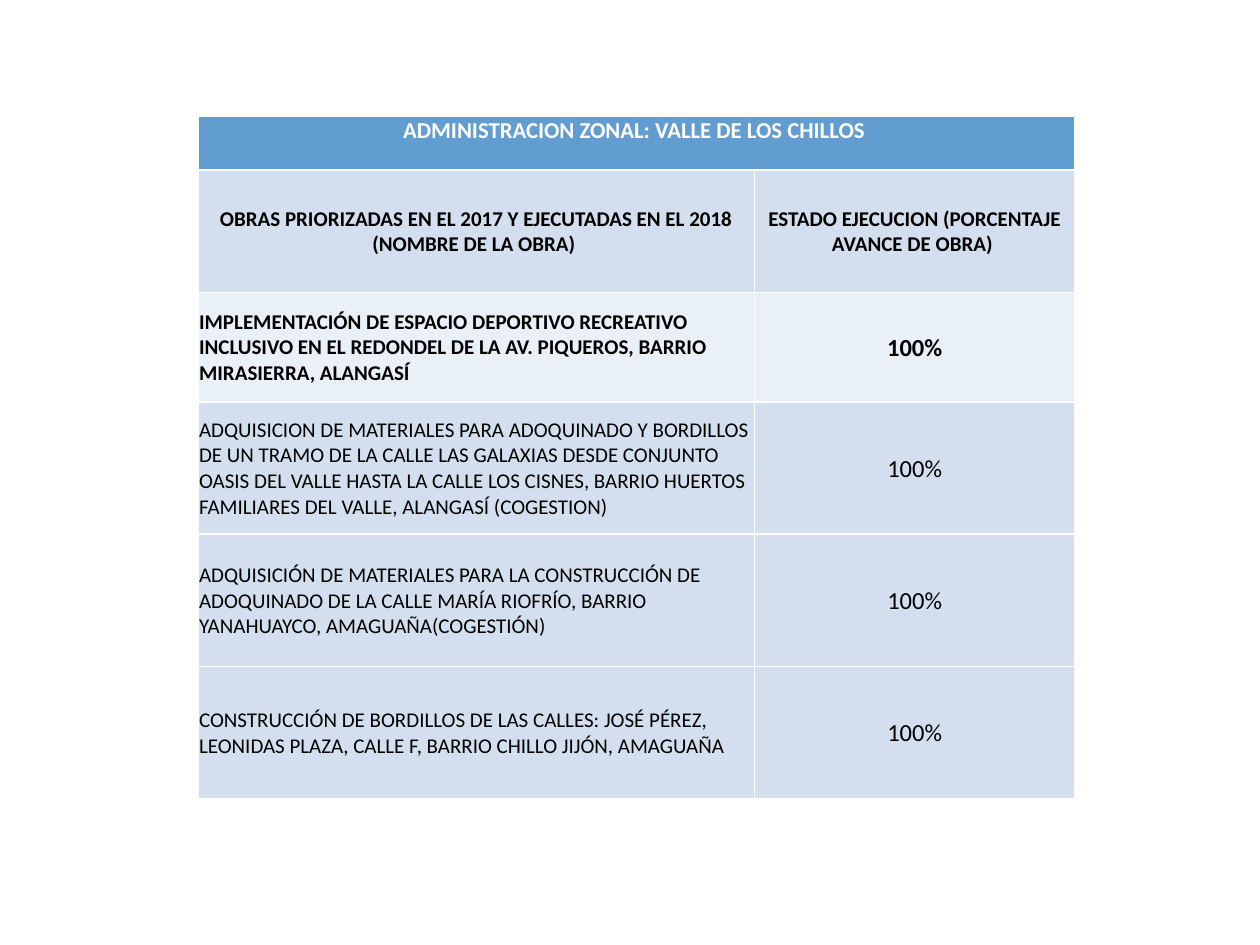
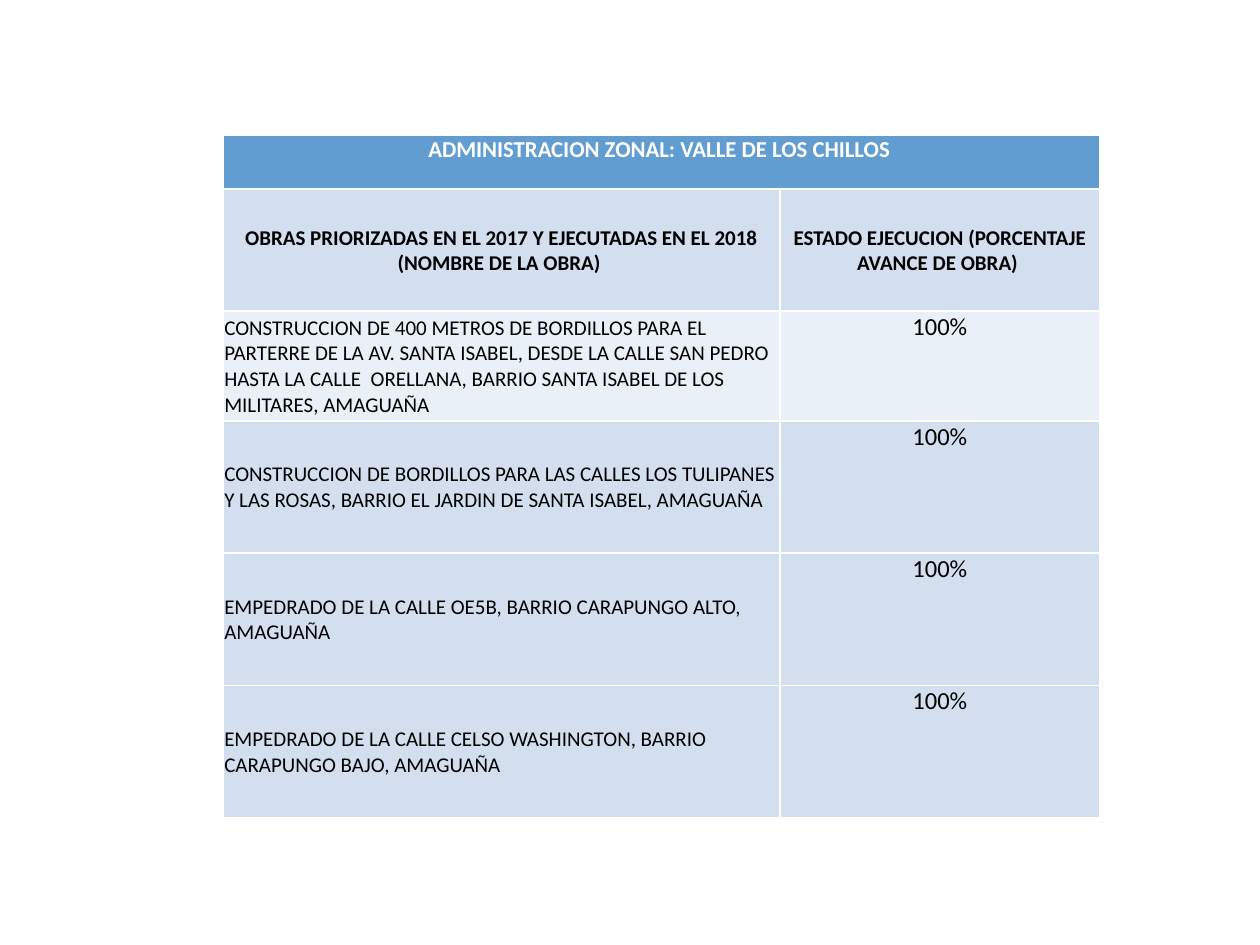
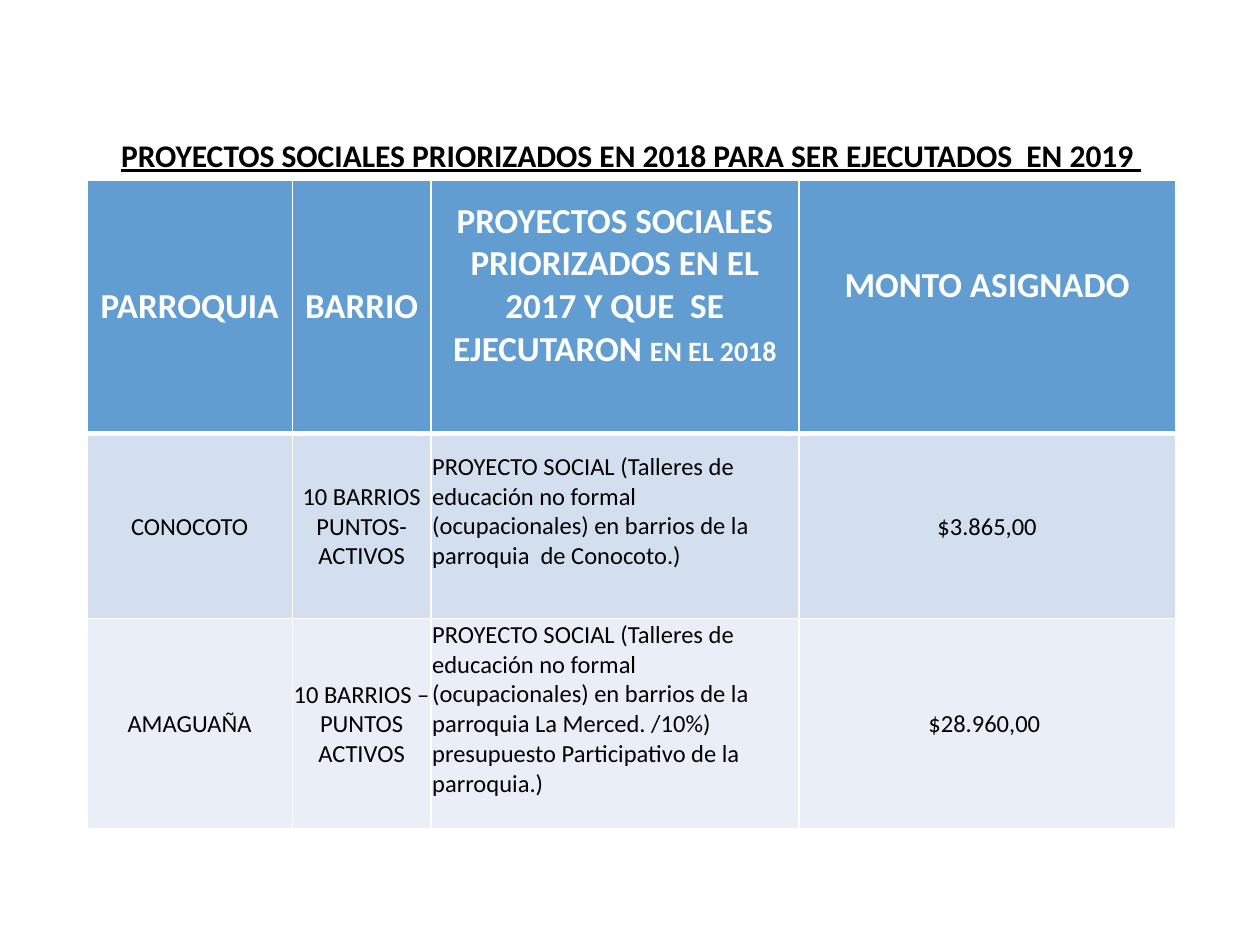
from lxml import etree
from pptx import Presentation
from pptx import util as u
from pptx.dml import color
from pptx.enum import text as t
from pptx.oxml import ns

W, H = 10, 7.5
FONT = "Calibri"
WHITE, BLACK = "FFFFFF", "000000"
BLUE, BAND, PALE, MIST = "629DD1", "D3DFEE", "EAF0F7", "EAEFF7"
TITLE, BLANK = 5, 6
LEFT, MID = t.PP_ALIGN.LEFT, t.PP_ALIGN.CENTER
TOP, CORE = t.MSO_ANCHOR.TOP, t.MSO_ANCHOR.MIDDLE
TIGHT = (0.01, 0.01, 0.01, 0)
HEAD = dict(color=WHITE, bold=True)


def rgb(code):
    return color.RGBColor.from_string(code)


def write(host, frame, words, size=12, color=BLACK, bold=False, line=False,
          align=MID, anchor=CORE, inset=TIGHT):
    host.vertical_anchor = anchor
    (host.margin_left, host.margin_top,
     host.margin_right, host.margin_bottom) = map(u.Inches, inset)
    para = frame.paragraphs[0]
    para.alignment = align
    runs = [(words, size)] if isinstance(words, str) else words
    for words, size in runs:
        run = para.add_run()
        run.text = words
        font = run.font
        font.name, font.size = FONT, u.Pt(size)
        font.bold, font.underline = bold, line
        font.color.rgb = rgb(color)


def edge(cell, top, base):
    props = cell._tc.get_or_add_tcPr()
    for side, width in zip("LRTB", (1, 1, top, base)):
        line = etree.SubElement(props, ns.qn(f"a:ln{side}"), w=str(u.Pt(width)))
        fill = etree.SubElement(line, ns.qn("a:solidFill"))
        etree.SubElement(fill, ns.qn("a:srgbClr"), val=WHITE)


def grid(slide, box, cols, rows, cells, fills, rule):
    x, y, w, h = box
    frame = slide.shapes.add_table(len(rows), len(cols), *map(u.Inches, box))
    table = frame.table
    table.first_row = table.horz_banding = False
    for col, share in zip(table.columns, cols):
        col.width = u.Inches(w * share / sum(cols))
    for row, share in zip(table.rows, rows):
        row.height = u.Inches(h * share / sum(rows))
    for i, line in enumerate(cells):
        for j, (words, form) in enumerate(line):
            cell = table.cell(i, j)
            edge(cell, rule if i == 1 else 1, rule if i == 0 else 1)
            cell.fill.solid()
            cell.fill.fore_color.rgb = rgb(fills[i])
            write(cell, cell.text_frame, words, **form)
    return table


def works(deck, box, items, anchor, strong=()):
    slide = deck.slides.add_slide(deck.slide_layouts[BLANK])
    cells = [
        [("ADMINISTRACION ZONAL: VALLE DE LOS CHILLOS ",
          dict(HEAD, size=13, anchor=TOP))],
        [("OBRAS PRIORIZADAS EN EL 2017 Y EJECUTADAS EN EL 2018 "
          "(NOMBRE DE LA OBRA) ", dict(bold=True)),
         ("ESTADO EJECUCION (PORCENTAJE AVANCE DE OBRA) ", dict(bold=True))],
    ]
    for i, item in enumerate(items):
        bold = i in strong
        cells.append([(item, dict(bold=bold, align=LEFT)),
                      ("100%", dict(size=14, bold=bold, anchor=anchor))])
    table = grid(slide, box, (4.42, 2.54),
                 (0.43, 0.97, 0.87, 1.05, 1.05, 1.05), cells,
                 (BLUE, BAND, PALE, BAND, BAND, BAND), 1.5)
    table.cell(0, 0).merge(table.cell(0, 1))


def plans(deck, box, title, heads, items):
    slide = deck.slides.add_slide(deck.slide_layouts[TITLE])
    x, y, w, h = box
    band = 0.4
    name = slide.shapes.title
    name.left, name.top, name.width, name.height = map(
        u.Inches, (x, y, w, band))
    frame = name.text_frame
    frame.word_wrap = True
    write(frame, frame, title, size=18, bold=True, line=True,
          anchor=TOP, inset=(0.1, 0.05, 0.1, 0.05))
    lifts = (0.05, 0.05, 0.39, 0.39)
    cells = [[(head, dict(HEAD, size=20, inset=(0.1, 0.05, 0.1, lift)))
              for head, lift in zip(heads, lifts)]]
    plain = dict(size=14)
    note = dict(plain, align=LEFT, inset=(0.01, 0.01, 0.01, 0.24))
    for item in items:
        cells.append(list(zip(item, (plain, plain, note, plain))))
    grid(slide, (x, y + band, w, h - band), (1.63, 1.1, 2.92, 2.99),
         (2.01, 1.47, 1.66), cells, (BLUE, BAND, MIST), 3)


def main():
    deck = Presentation()
    deck.slide_width, deck.slide_height = u.Inches(W), u.Inches(H)
    works(deck, (1.57, 0.92, 6.96, 5.42), (
        "IMPLEMENTACIÓN DE ESPACIO DEPORTIVO RECREATIVO INCLUSIVO EN EL "
        "REDONDEL DE LA AV. PIQUEROS, BARRIO MIRASIERRA, ALANGASÍ",
        "ADQUISICION DE MATERIALES PARA ADOQUINADO Y BORDILLOS DE UN TRAMO "
        "DE LA CALLE LAS GALAXIAS DESDE CONJUNTO OASIS DEL VALLE HASTA LA "
        "CALLE LOS CISNES, BARRIO HUERTOS FAMILIARES DEL VALLE, ALANGASÍ "
        "(COGESTION)",
        "ADQUISICIÓN DE MATERIALES PARA LA CONSTRUCCIÓN DE ADOQUINADO DE LA "
        "CALLE MARÍA RIOFRÍO, BARRIO YANAHUAYCO, AMAGUAÑA(COGESTIÓN)",
        "CONSTRUCCIÓN DE BORDILLOS DE LAS CALLES: JOSÉ PÉREZ, LEONIDAS "
        "PLAZA, CALLE F, BARRIO CHILLO JIJÓN, AMAGUAÑA",
    ), CORE, strong=(0,))
    works(deck, (1.77, 1.07, 6.96, 5.42), (
        "CONSTRUCCION DE 400 METROS DE BORDILLOS PARA EL PARTERRE DE LA AV. "
        "SANTA ISABEL, DESDE LA CALLE SAN PEDRO HASTA LA CALLE  ORELLANA, "
        "BARRIO SANTA ISABEL DE LOS MILITARES, AMAGUAÑA",
        "CONSTRUCCION DE BORDILLOS PARA LAS CALLES LOS TULIPANES Y LAS "
        "ROSAS, BARRIO EL JARDIN DE SANTA ISABEL, AMAGUAÑA",
        "EMPEDRADO DE LA CALLE OE5B, BARRIO CARAPUNGO ALTO, AMAGUAÑA",
        "EMPEDRADO DE LA CALLE CELSO WASHINGTON, BARRIO CARAPUNGO BAJO, "
        "AMAGUAÑA",
    ), TOP)
    course = ("PROYECTO SOCIAL (Talleres de educación no formal "
              "(ocupacionales) en barrios de la parroquia ")
    plans(
        deck, (0.69, 1.03, 8.64, 5.54),
        "PROYECTOS SOCIALES PRIORIZADOS EN 2018 PARA SER EJECUTADOS  EN 2019 ",
        ("PARROQUIA", "BARRIO",
         [("PROYECTOS SOCIALES PRIORIZADOS EN EL 2017 Y QUE  SE EJECUTARON ",
           20), ("EN EL 2018", 16)],
         "MONTO ASIGNADO"),
        (("CONOCOTO", "10 BARRIOS PUNTOS- ACTIVOS",
          course + " de Conocoto.)", "$3.865,00"),
         ("AMAGUAÑA", "10 BARRIOS –PUNTOS ACTIVOS",
          course + "La Merced. /10%) presupuesto Participativo de la "
          "parroquia.)", "$28.960,00 ")))
    deck.save("out.pptx")


if __name__ == "__main__":
    main()
